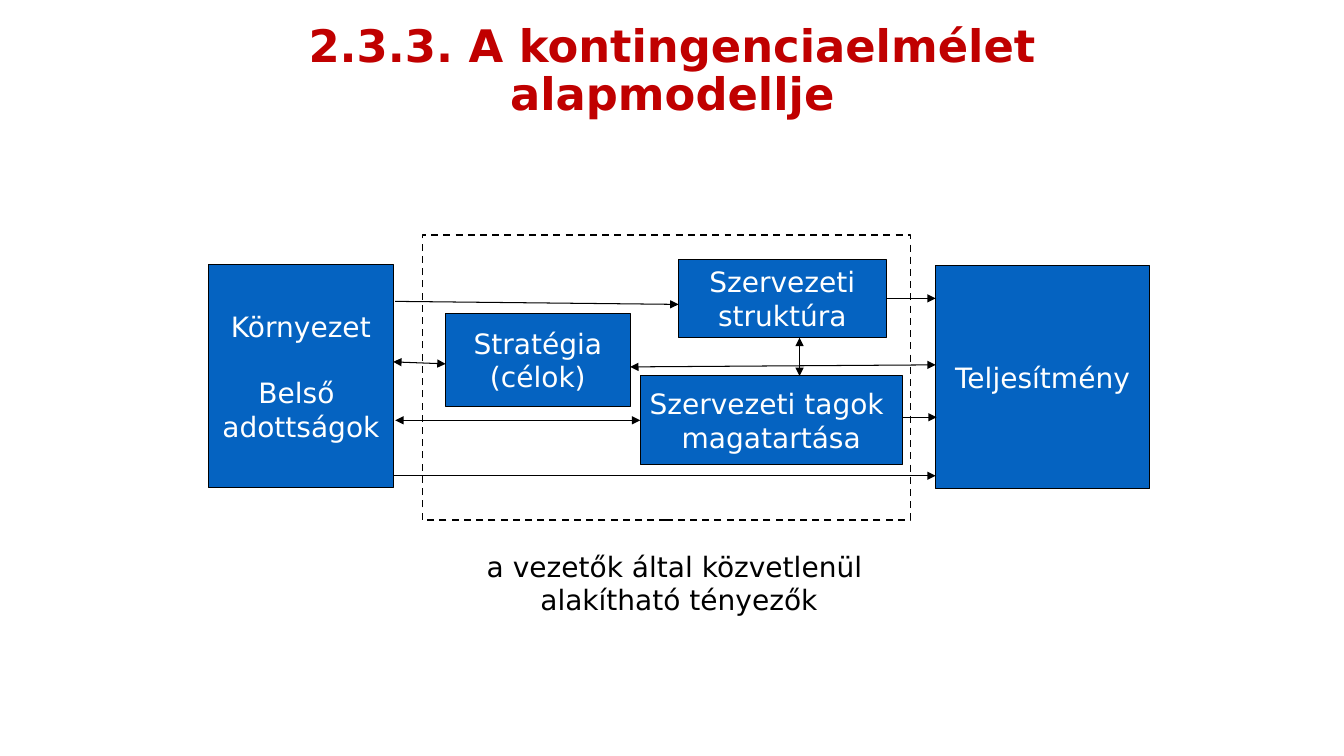
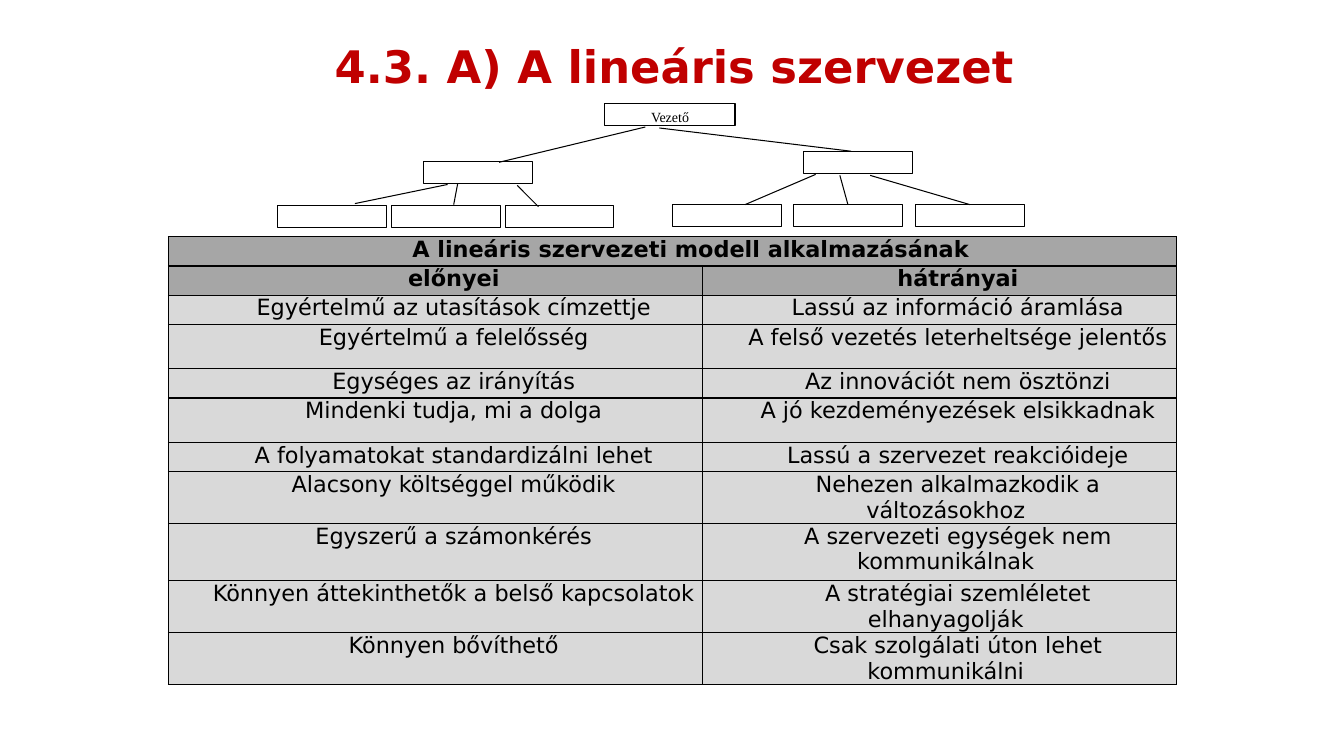
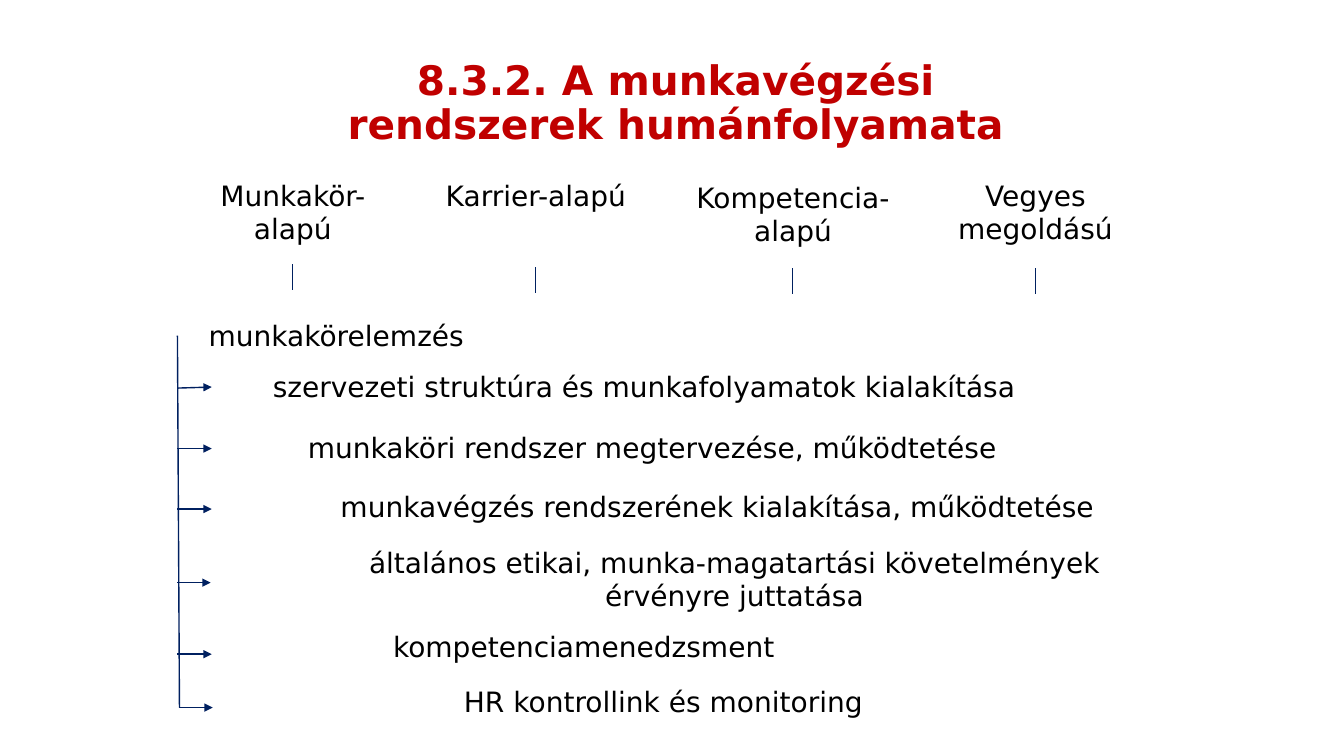
from lxml import etree
from pptx import Presentation
from pptx.dml.color import RGBColor
from pptx.enum.dml import MSO_LINE
from pptx.enum.shapes import MSO_CONNECTOR, MSO_SHAPE
from pptx.enum.text import MSO_ANCHOR, MSO_AUTO_SIZE, PP_ALIGN
from pptx.oxml.ns import qn
from pptx.util import Pt

PX = 9144  # 100 px to the inch
SLIDE_W, SLIDE_H = 1333, 750

RED = RGBColor(0xC0, 0x00, 0x00)
BLUE = RGBColor(0x05, 0x63, 0xC1)
NAVY = RGBColor(0x00, 0x20, 0x60)
BLACK = RGBColor(0x00, 0x00, 0x00)
WHITE = RGBColor(0xFF, 0xFF, 0xFF)
HEAD_GREY = RGBColor(0xA6, 0xA6, 0xA6)
ROW_GREY = RGBColor(0xD9, 0xD9, 0xD9)

FONT = "DejaVu Sans"
SERIF = "Times New Roman"

RECT = MSO_SHAPE.RECTANGLE
STRAIGHT = MSO_CONNECTOR.STRAIGHT
DASH = MSO_LINE.DASH
CENTER = PP_ALIGN.CENTER
TOP, MIDDLE = MSO_ANCHOR.TOP, MSO_ANCHOR.MIDDLE
NO_FIT, GROW = MSO_AUTO_SIZE.NONE, MSO_AUTO_SIZE.SHAPE_TO_FIT_TEXT
SIDE_TOP, SIDE_LEFT, SIDE_RIGHT = 0, 1, 3
TITLE_ONLY = 5


def px(*lengths):
    return [length * PX for length in lengths]


# Shared parts

def write(frame, text, *, size=20, color=BLACK, font=FONT, bold=False,
          spacing=None, before=None, after=None, indent=None):
    """Centred text, one paragraph a line; before maps a paragraph's index to points."""
    for index, words in enumerate(text.split("\n")):
        paragraph = frame.paragraphs[0] if index == 0 else frame.add_paragraph()
        paragraph.alignment = CENTER
        if indent:
            margin, first_line = px(*indent)
            properties = paragraph._p.get_or_add_pPr()
            properties.set("marL", str(margin))
            properties.set("indent", str(first_line))
        if spacing:
            paragraph.line_spacing = spacing
        if before and index in before:
            paragraph.space_before = Pt(before[index])
        if after:
            paragraph.space_after = Pt(after)
        run = paragraph.add_run()
        run.text = words
        run.font.name = font
        run.font.size = Pt(size)
        run.font.bold = bold
        run.font.color.rgb = color


def titled_slide(deck, text, box, size=32):
    slide = deck.slides.add_slide(deck.slide_layouts[TITLE_ONLY])
    title = slide.shapes.title
    title.left, title.top, title.width, title.height = px(*box)
    frame = title.text_frame
    frame.word_wrap = True
    frame.auto_size = NO_FIT
    frame.vertical_anchor = MIDDLE
    write(frame, text, size=size, color=RED, bold=True, spacing=0.9)
    return slide


def label(slide, text, box):
    frame = slide.shapes.add_textbox(*px(*box)).text_frame
    frame.word_wrap = True
    frame.auto_size = GROW
    write(frame, text)


def rectangle(slide, box, fill=None, width=0.75):
    shape = slide.shapes.add_shape(RECT, *px(*box))
    shape.shadow.inherit = False
    if fill is None:
        shape.fill.background()
    else:
        shape.fill.solid()
        shape.fill.fore_color.rgb = fill
    shape.line.color.rgb = BLACK
    shape.line.width = Pt(width)
    return shape


def line(slide, start, end, *, color=BLACK, width=0.75, heads="",
         begin_at=None, end_at=None):
    """heads lists the arrowheads: headEnd at the start, tailEnd at the end."""
    connector = slide.shapes.add_connector(STRAIGHT, *px(*start, *end))
    if begin_at:
        connector.begin_connect(*begin_at)
    if end_at:
        connector.end_connect(*end_at)
    connector.line.color.rgb = color
    connector.line.width = Pt(width)
    stroke = connector.line._get_or_add_ln()
    for head in heads.split():
        etree.SubElement(stroke, qn("a:" + head), type="triangle")
    etree.SubElement(connector._element.spPr, qn("a:effectLst"))


ONE_WAY, TWO_WAY = "tailEnd", "headEnd tailEnd"


# Slide 1: contingency model

def contingency_model(slide, left, top):
    def at(x, y):
        return left + x, top + y

    def factor(text, x, y, width, height, before=None):
        shape = rectangle(slide, (*at(x, y), width, height), BLUE)
        shape.text_frame.word_wrap = False
        shape.text_frame.vertical_anchor = MIDDLE
        write(shape.text_frame, text, color=WHITE, before=before)
        return shape

    factor("Környezet\nBelső \nadottságok", 0, 29, 183, 222, before={1: 23.5})
    factor("Stratégia\n(célok)", 235, 78, 183, 92)
    factor("Teljesítmény", 721, 30, 212, 222)
    structure = factor("Szervezeti\nstruktúra", 466, 24, 206, 78)
    behaviour = factor("Szervezeti tagok \nmagatartása", 428, 140, 260, 88)

    # Effects between the factors
    effects = [
        ((185, 66), (466, 69), ONE_WAY, None, None),
        ((672, 63), (721, 63), ONE_WAY, (structure, SIDE_RIGHT), None),
        ((183, 126), (235, 128), TWO_WAY, None, None),
        ((185, 184), (428, 184), TWO_WAY, None, (behaviour, SIDE_LEFT)),
        ((688, 181), (722, 181), ONE_WAY, None, None),
        ((418, 131), (721, 129), TWO_WAY, None, None),
        ((183, 239), (721, 239), ONE_WAY, None, None),
        ((586, 102), (586, 140), TWO_WAY, None, None),
    ]
    for start, end, heads, begin_at, end_at in effects:
        line(slide, at(*start), at(*end), heads=heads,
             begin_at=begin_at, end_at=end_at)

    # Range that managers control
    control_range = rectangle(slide, (*at(212, 0), 484, 283), width=1.25)
    control_range.line.dash_style = DASH
    label(slide, "a vezetők által közvetlenül \nalakítható tényezők",
          (*at(128, 307), 677, 77))


# Slide 2: linear organisation

def organisation_chart(slide, left, top):
    unit_w, unit_h = 108, 22

    def at(x, y):
        return left + x, top + y

    leader = rectangle(slide, (*at(325, 0), 129, unit_h), WHITE)
    leader.text_frame.word_wrap = True
    leader.text_frame.vertical_anchor = TOP
    write(leader.text_frame, "Vezető", size=10, font=SERIF, after=10)

    # Each branch: head unit, line to the leader, first unit, step, lines down
    branches = [
        ((145, 57), ((220, 58), (365, 23)), (0, 101), 113,
         [((77, 99), (169, 80)), ((175, 100), (179, 79)), ((259, 102), (238, 81))], ()),
        ((522, 47), ((569, 47), (379, 24)), (392, 100), 120.5,
         [((464, 100), (534, 70)), ((569, 100), (558, 71)), ((687, 100), (588, 71))],
         (1, 2)),
    ]
    for head, to_leader, (first_x, unit_y), step, links, joined in branches:
        rectangle(slide, (*at(*head), unit_w, unit_h), WHITE)
        line(slide, at(*to_leader[0]), at(*to_leader[1]))
        for index, (start, end) in enumerate(links):
            unit_x = first_x + int(index * step)
            unit = rectangle(slide, (*at(unit_x, unit_y), unit_w, unit_h), WHITE)
            line(slide, at(*start), at(*end),
                 begin_at=(unit, SIDE_TOP) if index in joined else None)


def border(cell):
    properties = cell._tc.get_or_add_tcPr()
    for side in ("lnL", "lnR", "lnT", "lnB"):
        edge = etree.SubElement(properties, qn("a:" + side), w=str(Pt(1)))
        fill = etree.SubElement(edge, qn("a:solidFill"))
        etree.SubElement(fill, qn("a:srgbClr"), val=str(BLACK))


def pros_and_cons(slide, left, top):
    rows = [
        ("A lineáris szervezeti modell alkalmazásának", "", 29),
        ("előnyei", "hátrányai", 29),
        ("Egyértelmű az utasítások címzettje", "Lassú az információ áramlása", 29),
        ("Egyértelmű a felelősség", "A felső vezetés leterheltsége jelentős", 44),
        ("Egységes az irányítás", "Az innovációt nem ösztönzi", 29),
        ("Mindenki tudja, mi a dolga", "A jó kezdeményezések elsikkadnak", 44),
        ("A folyamatokat standardizálni lehet", "Lassú a szervezet reakcióideje", 29),
        ("Alacsony költséggel működik", "Nehezen alkalmazkodik a változásokhoz", 39),
        ("Egyszerű a számonkérés", "A szervezeti egységek nem kommunikálnak", 57),
        ("Könnyen áttekinthetők a belső kapcsolatok",
         "A stratégiai szemléletet elhanyagolják", 39),
        ("Könnyen bővíthető", "Csak szolgálati úton lehet kommunikálni", 34),
    ]
    widths = (530, 470)
    height = sum(row[-1] for row in rows)
    table = slide.shapes.add_table(
        len(rows), len(widths), *px(left, top, sum(widths), height)).table
    table.first_row = table.horz_banding = False
    for column, width in zip(table.columns, widths):
        column.width = width * PX
    table.cell(0, 0).merge(table.cell(0, 1))

    for row_index, (*texts, row_height) in enumerate(rows):
        table.rows[row_index].height = row_height * PX
        heading = row_index < 2
        for column_index, text in enumerate(texts):
            cell = table.cell(row_index, column_index)
            cell.margin_left, cell.margin_right = px(8, 8)
            cell.margin_top = cell.margin_bottom = 0
            border(cell)
            cell.fill.solid()
            cell.fill.fore_color.rgb = HEAD_GREY if heading else ROW_GREY
            if text:
                write(cell.text_frame, text, size=16, bold=heading, indent=(12, 24))


# Slide 3: human process of work systems

def system_types(slide, left, top):
    # Text, offset, width, height, top of the mark below
    types = [
        ("Munkakör-alapú", (0, 0), 217, 77, 90),
        ("Karrier-alapú", (232, 0), 235, 44, 93),
        ("Kompetencia-alapú", (467, 2), 275, 77, 94),
        ("Vegyes megoldású", (721, 0), 248, 77, 94),
    ]
    for text, (x, y), width, height, mark_y in types:
        label(slide, text, (left + x, top + y, width, height))
        mark_x = left + x + width // 2
        line(slide, (mark_x, top + mark_y), (mark_x, top + mark_y + 26),
             color=NAVY, width=1)


def process_steps(slide, left, top):
    # Text, offset, width, height, start and end of the arrow
    steps = [
        ("munkakörelemzés", (0, 0), 315, 44, None),
        ("szervezeti struktúra és munkafolyamatok kialakítása",
         (34, 51), 858, 44, ((0, 74), (34, 73))),
        ("munkaköri rendszer megtervezése, működtetése",
         (81, 111), 780, 44, ((0, 134), (34, 134))),
        ("munkavégzés rendszerének kialakítása, működtetése",
         (110, 170), 851, 44, ((0, 194), (34, 194))),
        ("általános etikai, munka-magatartási követelmények érvényre juttatása",
         (148, 225), 809, 77, ((0, 267), (33, 267))),
        ("kompetenciamenedzsment", (177, 309), 452, 44, ((0, 338), (34, 338))),
        ("HR kontrollink és monitoring", (223, 363), 518, 44, ((2, 391), (35, 391))),
    ]
    line(slide, (left, top + 22), (left + 2, top + 391), color=NAVY, width=1)
    for text, (x, y), width, height, arrow in steps:
        label(slide, text, (left + x, top + y, width, height))
        if arrow:
            start, end = [(left + arrow_x, top + arrow_y) for arrow_x, arrow_y in arrow]
            line(slide, start, end, color=NAVY, width=1, heads=ONE_WAY)


def main():
    deck = Presentation()
    deck.slide_width, deck.slide_height = px(SLIDE_W, SLIDE_H)

    model = titled_slide(deck, "2.3.3. A kontingenciaelmélet alapmodellje",
                         (167, 9, 1000, 125))
    contingency_model(model, 207, 233)

    linear = titled_slide(deck, "4.3. A) A lineáris szervezet", (169, 33, 1000, 70))
    pros_and_cons(linear, 167, 235)
    organisation_chart(linear, 275, 103)

    process = titled_slide(deck, "8.3.2. A munkavégzési rendszerek humánfolyamata",
                           (334, 34, 673, 139), size=29)
    system_types(process, 182, 172)
    process_steps(process, 176, 311)

    deck.save("out.pptx")


if __name__ == "__main__":
    main()
